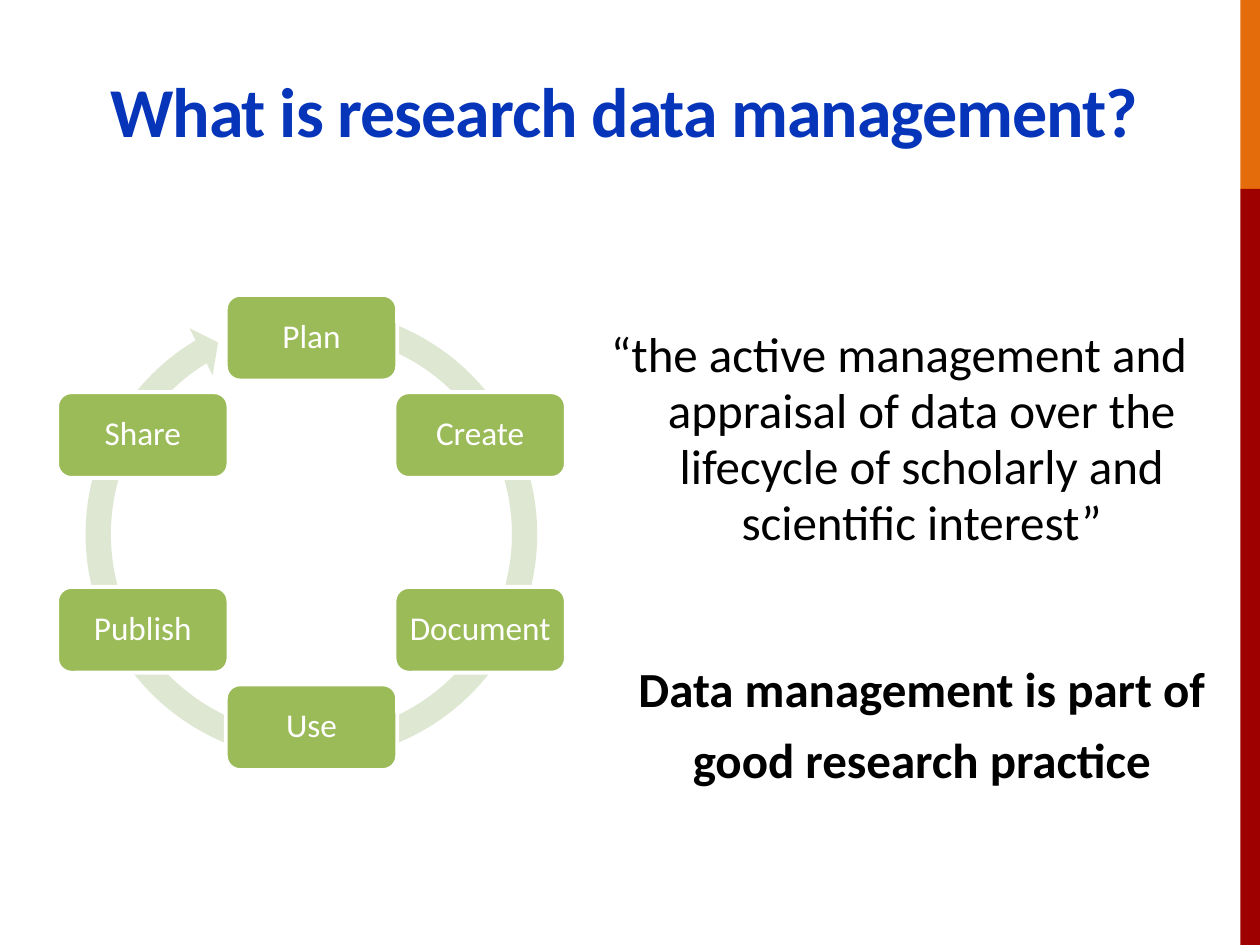
from math import cos, radians, sin

from pptx import Presentation
from pptx.dml.color import RGBColor
from pptx.enum.shapes import MSO_SHAPE as Shape
from pptx.enum.text import MSO_ANCHOR as Anchor, PP_ALIGN as Align
from pptx.util import Pt

ORANGE = RGBColor(0xE4, 0x6C, 0x0A)
RED = RGBColor(0x9E, 0x00, 0x00)
BLUE = RGBColor(0x06, 0x35, 0xBA)
GREEN = RGBColor(0x9B, 0xBB, 0x59)
PALE_GREEN = RGBColor(0xDE, 0xE7, 0xD1)
WHITE = RGBColor(0xFF, 0xFF, 0xFF)
BLACK = RGBColor(0x00, 0x00, 0x00)

STAGES = ["Plan", "Create", "Document", "Use", "Publish", "Share"]
CENTER_X, CENTER_Y, RADIUS = 178, 304.25, 111.3
STAGE_WIDTH, STAGE_HEIGHT = 98, 49
RING_SIZE = 273.6


def add_filled(slide, preset, left, top, width, height, color):
    part = slide.shapes.add_shape(preset, Pt(left), Pt(top), Pt(width), Pt(height))
    part.shadow.inherit = False
    part.fill.solid()
    part.fill.fore_color.rgb = color
    part.line.fill.background()
    return part


def add_text_area(slide, left, top, width, height):
    area = slide.shapes.add_textbox(Pt(left), Pt(top), Pt(width), Pt(height))
    area.text_frame.word_wrap = True
    return area.text_frame


def write(paragraph, text, size, color, spacing, bold=False):
    """Fill a centred paragraph with one run and return the run."""
    paragraph.alignment = Align.CENTER
    paragraph.line_spacing = spacing
    run = paragraph.add_run()
    run.text = text
    run.font.name = "Calibri"
    run.font.size = Pt(size)
    run.font.bold = bold
    run.font.color.rgb = color
    return run


def add_side_bar(slide):
    add_filled(slide, Shape.RECTANGLE, 708.75, 0, 11.25, 108, ORANGE)
    add_filled(slide, Shape.RECTANGLE, 708.75, 108, 11.25, 432, RED)


def add_title(slide):
    frame = add_text_area(slide, 7.2, 42.5, 699, 67.7)
    run = write(frame.paragraphs[0], "What is research data management?", 40, BLUE, 0.85, True)
    run.font._element.set("spc", "-60")


def add_ring(slide):
    ring = add_filled(slide, Shape.CIRCULAR_ARROW, CENTER_X - RING_SIZE / 2,
                      168.5, RING_SIZE, RING_SIZE, PALE_GREEN)
    for index, value in enumerate([0.05274, 3.126, 143.297, 170.678, 0.05477]):
        ring.adjustments[index] = value


def add_stage(slide, name, angle):
    """Place a stage on the cycle, with the angle clockwise from the top."""
    left = CENTER_X + RADIUS * sin(radians(angle)) - STAGE_WIDTH / 2
    top = CENTER_Y - RADIUS * cos(radians(angle)) - STAGE_HEIGHT / 2
    stage = add_filled(slide, Shape.ROUNDED_RECTANGLE, left, top,
                       STAGE_WIDTH, STAGE_HEIGHT, GREEN)
    stage.line.color.rgb = WHITE
    stage.line.width = Pt(2.25)
    frame = stage.text_frame
    frame.margin_left = frame.margin_right = Pt(4)
    frame.vertical_anchor = Anchor.MIDDLE
    write(frame.paragraphs[0], name, 19, WHITE, 0.9)


def add_definition(slide):
    frame = add_text_area(slide, 321.8, 184, 383.8, 283)
    lines = [
        ("“the active management and appraisal of data over the lifecycle of "
         "scholarly and scientific interest”", False, 0, -26),
        ("Data management is part of", True, 63.5, 0),
        ("good research practice", True, 8.5, 0),
    ]
    for index, (text, bold, gap, indent) in enumerate(lines):
        paragraph = frame.add_paragraph() if index else frame.paragraphs[0]
        write(paragraph, text, 28, BLACK, 0.95, bold)
        paragraph.space_before = Pt(gap)
        properties = paragraph._p.get_or_add_pPr()
        properties.set("marL", str(Pt(26)))
        properties.set("indent", str(Pt(indent)))


def main():
    deck = Presentation()
    deck.slide_width, deck.slide_height = Pt(720), Pt(540)
    slide = deck.slides.add_slide(deck.slide_layouts[6])
    add_side_bar(slide)
    add_definition(slide)
    add_title(slide)
    add_ring(slide)
    for index, name in enumerate(STAGES):
        add_stage(slide, name, index * 360 / len(STAGES))
    deck.save("out.pptx")


if __name__ == "__main__":
    main()
